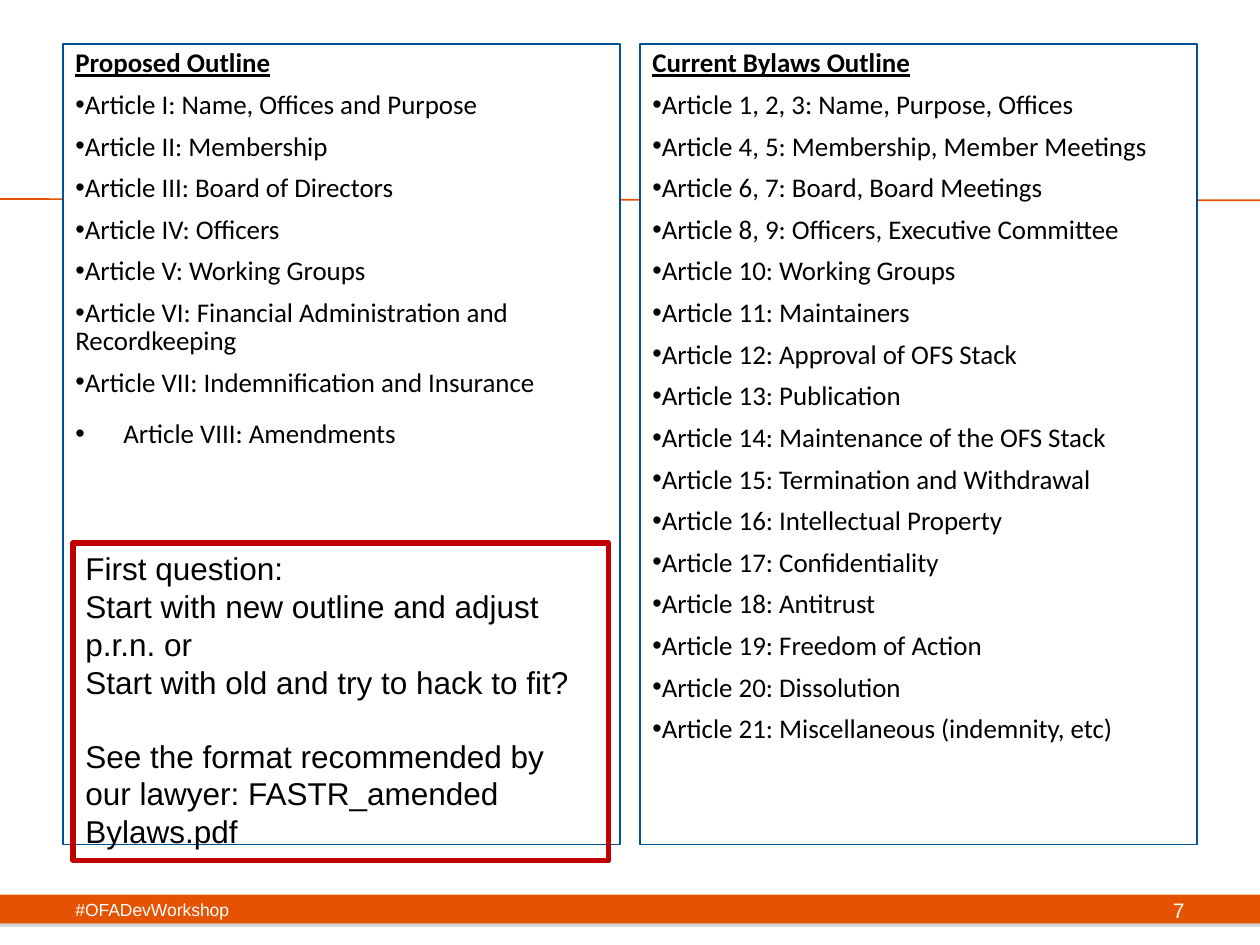
from dataclasses import dataclass

from lxml import etree
from pptx import Presentation
from pptx.dml.color import RGBColor
from pptx.enum.shapes import MSO_CONNECTOR, MSO_SHAPE
from pptx.enum.text import MSO_ANCHOR, MSO_AUTO_SIZE, PP_ALIGN
from pptx.oxml.ns import qn
from pptx.util import Emu, Inches, Pt

RECTANGLE = MSO_SHAPE.RECTANGLE
STRAIGHT = MSO_CONNECTOR.STRAIGHT
TOP, MIDDLE = MSO_ANCHOR.TOP, MSO_ANCHOR.MIDDLE
LEFT, RIGHT = PP_ALIGN.LEFT, PP_ALIGN.RIGHT
FIT_SHAPE = MSO_AUTO_SIZE.SHAPE_TO_FIT_TEXT

WIDTH, HEIGHT = 10, 7.5
MARGIN, GUTTER = 0.5, 0.16
COLUMN_WIDTH = (WIDTH - 2 * MARGIN - GUTTER) / 2
COLUMN_TOP, COLUMN_HEIGHT = 0.35, 6.35
FOOTER_TOP, FOOTER_HEIGHT = 7.02, 0.4
HANGING = 0.38

ORANGE, BLUE, RED = "E55302", "005195", "C00000"
BLACK, WHITE, GREY = "000000", "FFFFFF", "808080"


@dataclass
class Box:
    left: float
    top: float
    width: float
    height: float

    def lengths(self) -> tuple:
        return tuple(Inches(v) for v in (self.left, self.top, self.width, self.height))


@dataclass
class Line:
    text: str
    font: str = "Arial"
    size: float = 18
    color: str = BLACK
    heading: bool = False
    align: PP_ALIGN = LEFT
    bullet: bool = False
    indent: float = 0
    spacing: float = 1
    before: float = 0
    after: float = 0


@dataclass
class Outline:
    heading: str
    articles: list[str]
    last: str = ""

    def lines(self) -> list[Line]:
        style = dict(font="Calibri", size=15.4)
        tight = dict(spacing=0.87, after=7.7, **style)
        lines = [Line(self.heading, heading=True, **tight)]
        lines += [Line(f"Article {text}", bullet=True, **tight) for text in self.articles]
        if self.last:
            lines.append(Line(self.last, bullet=True, indent=HANGING, before=3, **style))
        return lines


OUTLINES = [
    Outline(
        "Proposed Outline",
        [
            "I: Name, Offices and Purpose",
            "II: Membership",
            "III: Board of Directors",
            "IV: Officers",
            "V: Working Groups",
            "VI: Financial Administration and Recordkeeping",
            "VII: Indemnification and Insurance",
        ],
        last="Article VIII: Amendments",
    ),
    Outline(
        "Current Bylaws Outline",
        [
            "1, 2, 3: Name, Purpose, Offices",
            "4, 5: Membership, Member Meetings",
            "6, 7: Board, Board Meetings",
            "8, 9: Officers, Executive Committee",
            "10: Working Groups",
            "11: Maintainers",
            "12: Approval of OFS Stack",
            "13: Publication",
            "14: Maintenance of the OFS Stack",
            "15: Termination and Withdrawal",
            "16: Intellectual Property",
            "17: Confidentiality",
            "18: Antitrust",
            "19: Freedom of Action",
            "20: Dissolution",
            "21: Miscellaneous (indemnity, etc)",
        ],
    ),
]

QUESTION = [
    Line("First question:"),
    Line("Start with new outline and adjust p.r.n. or"),
    Line("Start with old and try to hack to fit?"),
    Line("See the format recommended by our lawyer: FASTR_amended Bylaws.pdf", before=20.7),
]


def rgb(value: str) -> RGBColor:
    return RGBColor.from_string(value)


def add_rectangle(slide, box: Box, fill: str = "", line: str = "", weight: float = 0):
    shape = slide.shapes.add_shape(RECTANGLE, *box.lengths())
    shape.shadow.inherit = False
    if fill:
        shape.fill.solid()
        shape.fill.fore_color.rgb = rgb(fill)
    else:
        shape.fill.background()
    if line:
        shape.line.color.rgb = rgb(line)
        shape.line.width = Pt(weight)
    else:
        shape.line.fill.background()
    return shape


def add_bullet(paragraph, indent: float) -> None:
    properties = paragraph._p.get_or_add_pPr()
    properties.set("marL", str(Inches(indent)))
    properties.set("indent", str(-Inches(HANGING)))
    etree.SubElement(properties, qn("a:buFont")).set("typeface", "Arial")
    etree.SubElement(properties, qn("a:buChar")).set("char", "•")


def write(shape, lines: list[Line], anchor: MSO_ANCHOR = TOP) -> None:
    frame = shape.text_frame
    frame.word_wrap = True
    frame.vertical_anchor = anchor
    for index, line in enumerate(lines):
        paragraph = frame.add_paragraph() if index else frame.paragraphs[0]
        if line.bullet:
            add_bullet(paragraph, line.indent)
        paragraph.alignment = line.align
        paragraph.line_spacing = line.spacing
        paragraph.space_before = Pt(line.before)
        paragraph.space_after = Pt(line.after)
        run = paragraph.add_run()
        run.text = line.text
        run.font.name = line.font
        run.font.size = Pt(line.size)
        run.font.color.rgb = rgb(line.color)
        run.font.bold = run.font.underline = line.heading


def add_drop_shadow(shape) -> None:
    effects = shape._element.spPr.find(qn("a:effectLst"))
    shadow = etree.SubElement(effects, qn("a:outerShdw"), blurRad="0", dist=str(Pt(1.8)), dir="5400000")
    color = etree.SubElement(shadow, qn("a:srgbClr"), val=GREY)
    etree.SubElement(color, qn("a:alpha"), val="35000")


def add_rule(slide, start: float, end: float) -> None:
    rule = slide.shapes.add_connector(STRAIGHT, Emu(0), Inches(start), Inches(WIDTH), Inches(end))
    rule.line.color.rgb = rgb(ORANGE)
    rule.line.width = Pt(1)
    etree.SubElement(rule._element.spPr, qn("a:effectLst"))


def add_footer_text(slide, left: float, width: float, line: Line) -> None:
    box = Box(left, FOOTER_TOP, width, FOOTER_HEIGHT)
    write(slide.shapes.add_textbox(*box.lengths()), [line], MIDDLE)


def main() -> None:
    presentation = Presentation()
    presentation.slide_width, presentation.slide_height = Inches(WIDTH), Inches(HEIGHT)
    slide = presentation.slides.add_slide(presentation.slide_layouts[6])

    add_drop_shadow(add_rectangle(slide, Box(0, 7.1, WIDTH, 0.23), fill=ORANGE))
    add_rule(slide, 1.58, 1.59)

    for column, outline in enumerate(OUTLINES):
        left = MARGIN + column * (COLUMN_WIDTH + GUTTER)
        box = Box(left, COLUMN_TOP, COLUMN_WIDTH, COLUMN_HEIGHT)
        write(add_rectangle(slide, box, WHITE, BLUE, 0.75), outline.lines())

    add_footer_text(slide, MARGIN, 3.17, Line("#OFADevWorkshop", size=10, color=WHITE))
    add_footer_text(slide, WIDTH - MARGIN - 2.33, 2.33, Line("7", size=12, color=WHITE, align=RIGHT))

    question = add_rectangle(slide, Box(0.58, 4.31, 4.25, 2.52), line=RED, weight=3)
    write(question, QUESTION)
    question.text_frame.auto_size = FIT_SHAPE

    presentation.save("out.pptx")


if __name__ == "__main__":
    main()
